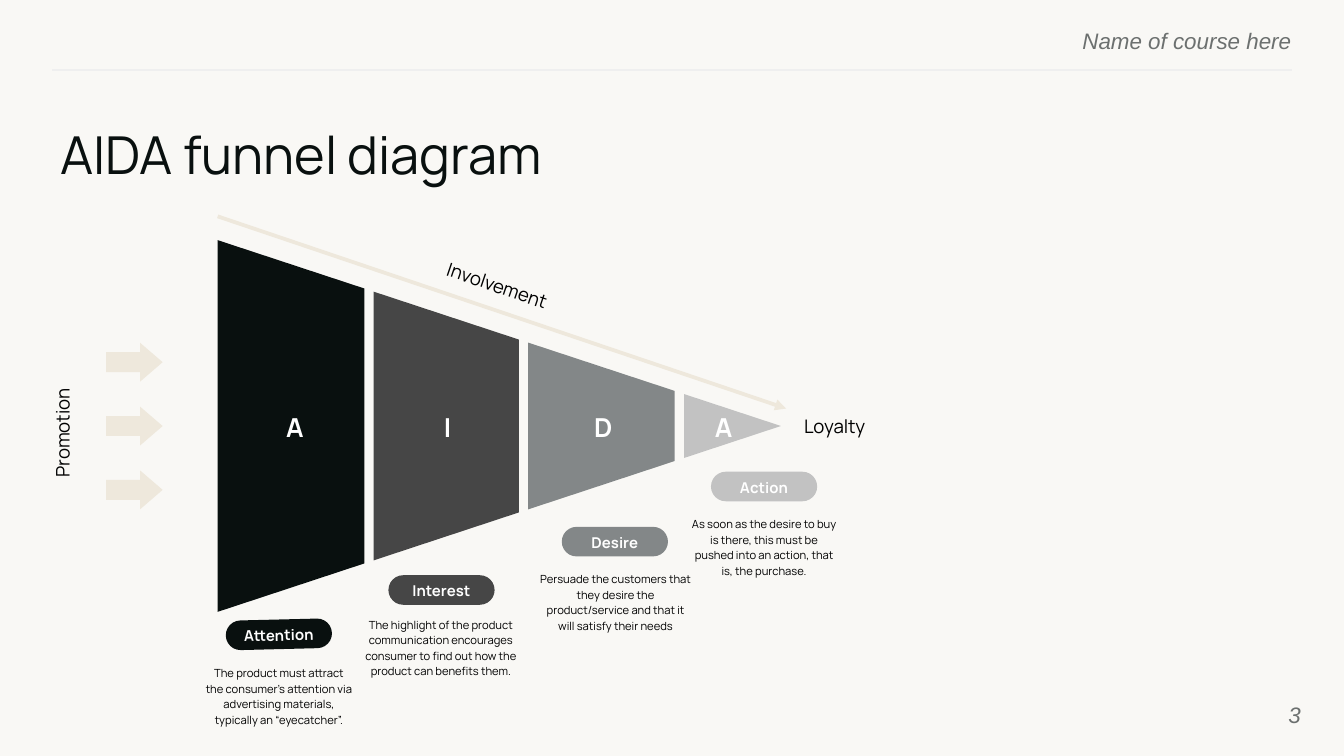
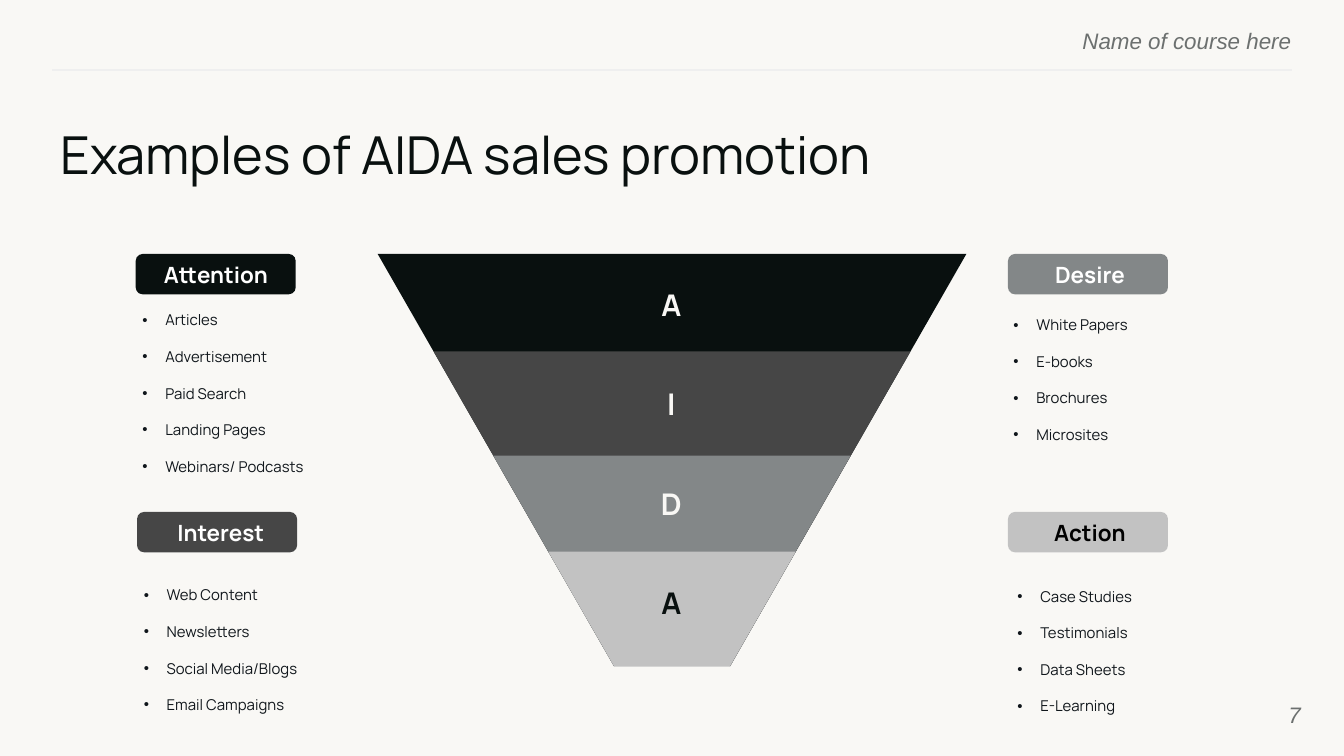
from dataclasses import dataclass
from typing import NamedTuple

import lxml.etree
import pptx
import pptx.dml.color
import pptx.enum.shapes
import pptx.enum.text
import pptx.oxml.ns
import pptx.presentation
import pptx.shapes.autoshape
import pptx.shapes.base
import pptx.shapes.connector
import pptx.slide
import pptx.text.text
import pptx.util

Inches = pptx.util.Inches
Pt = pptx.util.Pt
RGBColor = pptx.dml.color.RGBColor
Shape = pptx.shapes.autoshape.Shape
Slide = pptx.slide.Slide
KIND = pptx.enum.shapes.MSO_SHAPE
ALIGN = pptx.enum.text.PP_ALIGN
ANCHOR = pptx.enum.text.MSO_ANCHOR
qn = pptx.oxml.ns.qn

# Colours, fonts and size
PAPER = RGBColor(0xF9, 0xF8, 0xF5)
INK = RGBColor(0x09, 0x10, 0x0F)
DARK = RGBColor(0x46, 0x46, 0x46)
MID = RGBColor(0x83, 0x87, 0x88)
PALE = RGBColor(0xC2, 0xC2, 0xC2)
SAND = RGBColor(0xEE, 0xE8, 0xDC)
RULE = RGBColor(0xEF, 0xEF, 0xEF)
MUTED = RGBColor(0x6C, 0x70, 0x6F)
ITEM = RGBColor(0x10, 0x16, 0x1B)
WHITE = RGBColor(0xFF, 0xFF, 0xFF)
BLACK = RGBColor(0, 0, 0)
SHADES = (INK, DARK, MID, PALE)
BRAND = "Manrope"
PLAIN = "Arial"
WIDTH = 10
HEIGHT = WIDTH * 9 / 16


class Box(NamedTuple):
    left: float
    top: float
    width: float
    height: float

    def place(self) -> tuple:
        return tuple(Inches(size) for size in self)


@dataclass
class Stage:
    """A slice of the funnel with its tag and caption."""
    mark: str
    left: float
    right: float
    mid: float
    fill: RGBColor
    name: str
    tag: tuple[float, float]
    note: str
    area: Box
    turn: float = 0


@dataclass
class Topic:
    """A badge with a bulleted list."""
    name: str
    fill: RGBColor
    color: RGBColor
    badge: tuple[float, float]
    label: Box
    align: ALIGN
    holder: int
    area: Box
    items: tuple[str, ...]


STAGES = (
    Stage("A", 1.62, 2.71, 2.19, INK, "Attention", (1.68, 4.61),
          "The product must attract the consumer's attention via advertising "
          "materials, typically an “eyecatcher”.",
          Box(1.5, 4.98, 1.15, 0.39), -1.4),
    Stage("I", 2.78, 3.86, 3.33, DARK, "Interest", (2.89, 4.28),
          "The highlight of the product communication encourages consumer to "
          "find out how the product can benefits them.",
          Box(2.61, 4.62, 1.34, 0.39)),
    Stage("D", 3.93, 5.02, 4.48, MID, "Desire", (4.18, 3.92),
          "Persuade the customers that they desire the product/service and "
          "that it will satisfy their needs",
          Box(3.98, 4.28, 1.2, 0.39)),
    Stage("A", 5.09, 5.81, 5.38, PALE, "Action", (5.29, 3.51),
          "As soon as the desire to buy is there, this must be pushed into an "
          "action, that is, the purchase.",
          Box(5.12, 3.87, 1.13, 0.39)),
)

TOPICS = (
    Topic("Attention", INK, WHITE, (1.01, 1.89), Box(1.18, 1.92, 1.02, 0.24),
          ALIGN.LEFT, 1, Box(1.02, 2.4, 2.54, 1.05),
          ("Articles", "Advertisement", "Paid Search", "Landing Pages",
           "Webinars/ Podcasts")),
    Topic("Interest", DARK, WHITE, (1.02, 3.81), Box(1.28, 3.84, 0.78, 0.24),
          ALIGN.LEFT, 2, Box(1.03, 4.41, 2.54, 0.85),
          ("Web Content", "Newsletters", "Social Media/Blogs",
           "Email Campaigns")),
    Topic("Desire", MID, WHITE, (7.5, 1.89), Box(7.81, 1.92, 0.69, 0.24),
          ALIGN.LEFT, 3, Box(7.5, 2.4, 2.54, 0.85),
          ("White Papers", "E-books", "Brochures", "Microsites")),
    Topic("Action", PALE, BLACK, (7.5, 3.81), Box(7.64, 3.84, 0.94, 0.24),
          ALIGN.CENTER, 4, Box(7.53, 4.42, 2.54, 0.85),
          ("Case Studies", "Testimonials", "Data Sheets", "E-Learning")),
)


# Text
def write(frame: pptx.text.text.TextFrame, *lines: str, size: float = 10,
          color: RGBColor = BLACK, font: str = BRAND, bold: bool = False,
          slant: bool = False, align: ALIGN = ALIGN.CENTER,
          anchor: ANCHOR = ANCHOR.TOP, inset: tuple = (0.02, 0.02),
          lead: float = 1, gap: float = 0, after: float = 0) -> None:
    """Fill a frame; gap parts the lines, after follows the last one."""
    frame.word_wrap = True
    frame.auto_size = pptx.enum.text.MSO_AUTO_SIZE.NONE
    frame.vertical_anchor = anchor
    frame.margin_left = frame.margin_right = Inches(inset[0])
    frame.margin_top = frame.margin_bottom = Inches(inset[1])
    frame.text = "\n".join(lines)
    for i, para in enumerate(frame.paragraphs):
        para.alignment = align
        para.line_spacing = lead
        para.space_before = Pt(gap if i else 0)
        para.space_after = Pt(after if i == len(lines) - 1 else 0)
        face = para.runs[0].font
        face.name, face.size = font, Pt(size)
        face.bold, face.italic = bold, slant
        face.color.rgb = color


def label(slide: Slide, box: Box, text: str, turn: float = 0, **form) -> None:
    shape = slide.shapes.add_textbox(*box.place())
    shape.rotation = turn
    write(shape.text_frame, text, **form)


def move(shape: pptx.shapes.base.BaseShape, box: Box) -> None:
    shape.left, shape.top, shape.width, shape.height = box.place()


def bullet(para: pptx.text.text._Paragraph) -> None:
    props = para._p.get_or_add_pPr()
    props.set("marL", str(Inches(0.19)))
    props.set("indent", str(Inches(-0.17)))
    tint = lxml.etree.SubElement(props, qn("a:buClr"))
    lxml.etree.SubElement(tint, qn("a:srgbClr"), val=str(ITEM))
    lxml.etree.SubElement(props, qn("a:buFont"), typeface=PLAIN)
    lxml.etree.SubElement(props, qn("a:buChar"), char="•")


# Shapes
def paint(shape: Shape, fill: RGBColor) -> None:
    shape.shadow.inherit = False
    shape.fill.solid()
    shape.fill.fore_color.rgb = fill
    shape.line.fill.background()


def block(slide: Slide, kind: KIND, box: Box, fill: RGBColor,
          turn: float = 0, adjust: tuple = ()) -> None:
    shape = slide.shapes.add_shape(kind, *box.place())
    shape.rotation = turn
    for i, value in enumerate(adjust):
        shape.adjustments[i] = value
    paint(shape, fill)


def line(slide: Slide, start: tuple, end: tuple, color: RGBColor,
         width: float) -> pptx.shapes.connector.Connector:
    link = slide.shapes.add_connector(
        pptx.enum.shapes.MSO_CONNECTOR.STRAIGHT,
        *(Inches(size) for size in (*start, *end)))
    link.line.color.rgb = color
    link.line.width = Pt(width)
    lxml.etree.SubElement(link._element.spPr, qn("a:effectLst"))
    return link


# Shared slide frame
def begin(deck: pptx.presentation.Presentation, layout: str, title: str,
          page: str) -> Slide:
    slide = deck.slides.add_slide(deck.slide_layouts.get_by_name(layout))
    small = dict(size=12, font=PLAIN, color=MUTED, slant=True,
                 align=ALIGN.RIGHT, inset=(0, 0))
    label(slide, Box(5.76, 0.2, 3.85, 0.18), "Name of course here", **small)
    line(slide, (9.61, 0.52), (0.39, 0.52), RULE, 0.75)
    head = slide.shapes.title
    move(head, Box(0.45, 0.91, 9.23, 0.51))
    write(head.text_frame, title, size=28, color=INK, align=ALIGN.LEFT,
          inset=(0, 0), after=10)
    label(slide, Box(9.08, 5.1, 0.6, 0.43), page, anchor=ANCHOR.MIDDLE,
          **small)
    return slide


# Slide with the sideways funnel
def slice_up(slide: Slide, stage: Stage) -> None:
    tip, axis, slope = 5.81, 3.17, 0.33
    near, far = ((tip - x) * slope for x in (stage.left, stage.right))
    points = [(stage.left, axis - near), (stage.left, axis + near),
              (stage.right, axis + far)]
    if far:
        points.append((stage.right, axis - far))
    spots = [(Inches(x), Inches(y)) for x, y in points]
    pen = slide.shapes.build_freeform(*spots[0])
    pen.add_line_segments(spots[1:], close=True)
    paint(pen.convert_to_shape(), stage.fill)
    label(slide, Box(stage.mid - 0.08, 3.05, 0.16, 0.25), stage.mark, size=14,
          color=WHITE, bold=True, anchor=ANCHOR.MIDDLE)


def caption(slide: Slide, stage: Stage) -> None:
    left, top = stage.tag
    block(slide, KIND.ROUNDED_RECTANGLE, Box(left, top, 0.79, 0.22),
          stage.fill, stage.turn, (0.5,))
    label(slide, Box(left + 0.08, top + 0.03, 0.63, 0.17), stage.name,
          stage.turn, size=8, color=WHITE, bold=True, anchor=ANCHOR.MIDDLE)
    label(slide, stage.area, stage.note, size=6, lead=1.15,
          anchor=ANCHOR.MIDDLE)


def funnel(deck: pptx.presentation.Presentation) -> None:
    slide = begin(deck, "Title Only", "AIDA funnel diagram", "3")
    for stage in STAGES:
        slice_up(slide, stage)
        caption(slide, stage)
    label(slide, Box(5.72, 3.07, 0.98, 0.2), "Loyalty")
    label(slide, Box(3.09, 2.02, 1.22, 0.2), "Involvement", 18.8)
    label(slide, Box(-0.35, 3.12, 1.62, 0.2), "Promotion", 270)
    trend = line(slide, (1.62, 1.61), (5.85, 3.04), SAND, 2)
    lxml.etree.SubElement(trend.line._get_or_add_ln(), qn("a:tailEnd"),
                          type="triangle")
    for i in range(3):
        block(slide, KIND.RIGHT_ARROW,
              Box(0.79, 2.55 + 0.95 * i / 2, 0.42, 0.29), SAND,
              adjust=(0.51, 0.58))


# Slide with the upright funnel and four lists
def panel(slide: Slide, topic: Topic) -> None:
    block(slide, KIND.ROUNDED_RECTANGLE, Box(*topic.badge, 1.19, 0.3),
          topic.fill, adjust=(0.17,))
    label(slide, topic.label, topic.name, size=12, color=topic.color,
          bold=True, align=topic.align, inset=(0.04, 0.02))
    body = slide.placeholders[topic.holder]
    move(body, topic.area)
    write(body.text_frame, *topic.items, size=8, color=ITEM,
          align=ALIGN.LEFT, anchor=ANCHOR.MIDDLE, gap=10, after=10)
    for para in body.text_frame.paragraphs:
        bullet(para)


def lists(deck: pptx.presentation.Presentation) -> None:
    slide = begin(deck, "Comparison", "Examples of AIDA sales promotion", "7")
    for topic in TOPICS:
        panel(slide, topic)
    base, ratio = 5.71, 3.82 / 4.38
    for wide, fill in zip((4.38, 3.55, 2.66, 1.84), SHADES):
        tall = wide * ratio
        block(slide, KIND.ISOSCELES_TRIANGLE,
              Box((WIDTH - wide) / 2, base - tall, wide, tall), fill, 180)
    block(slide, KIND.RECTANGLE, Box(4.45, 4.96, 1.1, 0.75), PAPER)
    for i, mark in enumerate("AIDA"):
        label(slide, Box(4.18, 1.89 + 0.74 * i, 1.63, 0.71), mark, size=16,
              color=INK if i == 3 else PAPER, bold=True, lead=1.15,
              anchor=ANCHOR.MIDDLE, inset=(0, 0))


def main() -> None:
    deck = pptx.Presentation()
    deck.slide_width, deck.slide_height = Inches(WIDTH), Inches(HEIGHT)
    back = deck.slide_master.background.fill
    back.solid()
    back.fore_color.rgb = PAPER
    funnel(deck)
    lists(deck)
    deck.save("out.pptx")


if __name__ == "__main__":
    main()
